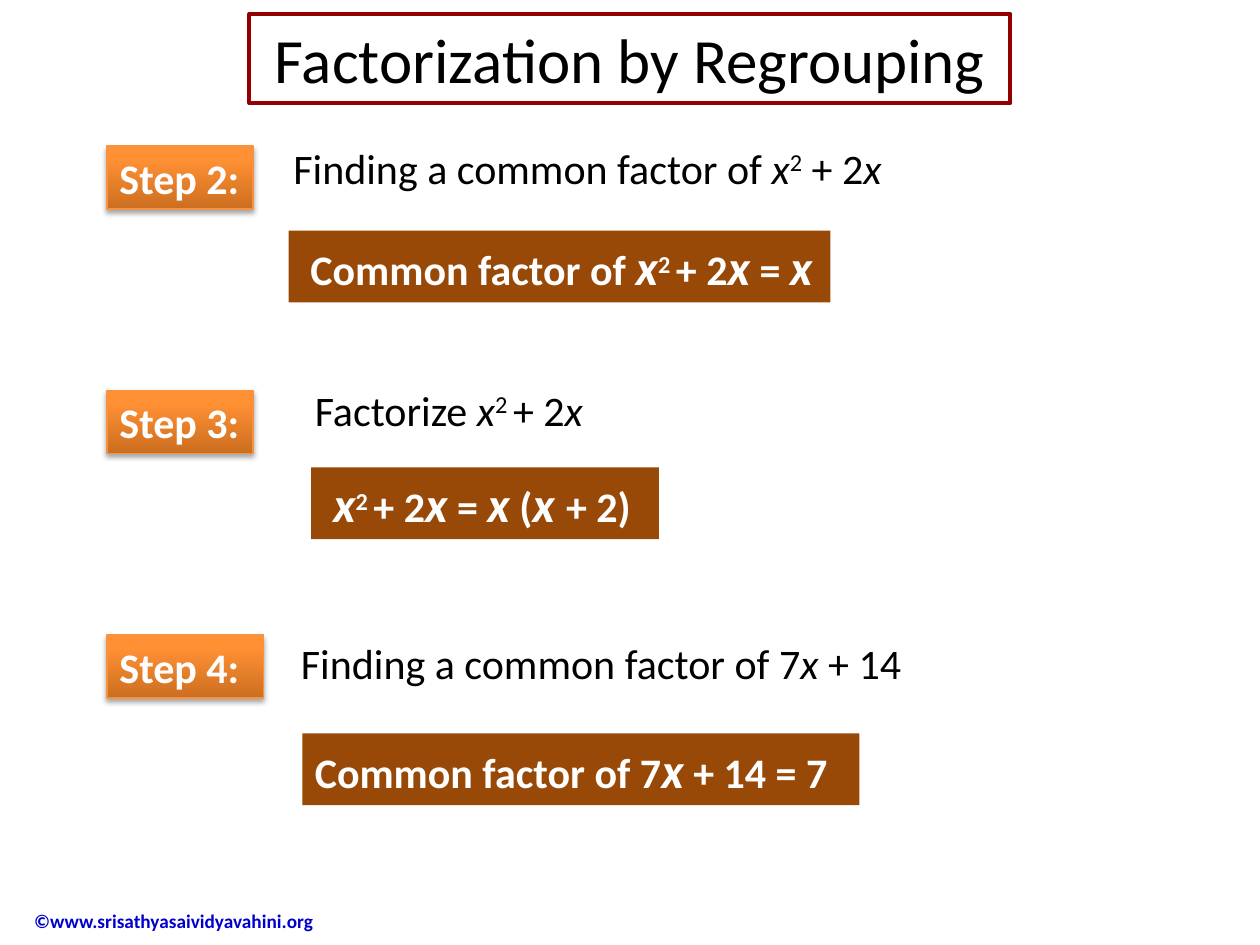
from dataclasses import dataclass
from enum import Enum

import lxml.etree
import pptx
import pptx.dml.color
import pptx.enum.shapes
import pptx.enum.text
import pptx.oxml.ns
import pptx.util

Inches, Pt = pptx.util.Inches, pptx.util.Pt
qn = pptx.oxml.ns.qn

COLORS = {
    "text": "000000",
    "white": "FFFFFF",
    "result": "984807",
    "step_line": "F69240",
    "title_line": "920000",
    "copyright": "0000CC",
    "shadow": "000000",
}
STEP_GRADIENT = [(0, "CC6E20"), (80, "FF9034"), (100, "FF9136")]


class Kind(Enum):
    PLAIN = "plain"
    VAR = "variable"
    SUP = "superscript"


@dataclass
class Run:
    text: str
    kind: Kind = Kind.PLAIN


@dataclass
class Box:
    left: float
    top: float
    width: float
    height: float
    runs: list[Run]


@dataclass
class Step:
    label: Box
    task: Box
    result: Box


X = Run("x", Kind.VAR)
X_SQUARED_PLUS_2X = [X, Run("2 ", Kind.SUP), Run("+ 2"), X]

STEPS = [
    Step(
        Box(0.85, 1.16, 1.16, 0.5, [Run("Step 2:")]),
        Box(2.23, 1.08, 5.02, 0.5,
            [Run("Finding a common factor of "), X, Run("2", Kind.SUP), Run(" + 2"), X]),
        Box(2.29, 1.83, 4.3, 0.57,
            [Run(" Common factor of "), *X_SQUARED_PLUS_2X, Run(" = "), X]),
    ),
    Step(
        Box(0.85, 3.1, 1.16, 0.5, [Run("Step 3:")]),
        Box(2.4, 3, 2.59, 0.5, [Run("Factorize "), *X_SQUARED_PLUS_2X]),
        Box(2.47, 3.71, 2.76, 0.57,
            [Run(" "), *X_SQUARED_PLUS_2X, Run(" = "), X, Run(" ("),
             Run("x ", Kind.VAR), Run("+ 2)")]),
    ),
    Step(
        Box(0.85, 5.04, 1.24, 0.5, [Run("Step 4:")]),
        Box(2.29, 5.01, 5.17, 0.5,
            [Run("Finding a common factor of 7"), X, Run(" + 14")]),
        Box(2.4, 5.82, 4.42, 0.57,
            [Run("Common factor of 7"), X, Run(" + 14 = 7")]),
    ),
]
TITLE = Box(1.98, 0.11, 6.04, 0.71, [Run("Factorization by Regrouping")])
COPYRIGHT = Box(-0.33, 7.1, 3.02, 0.41, [Run("©www.srisathyasaividyavahini.org")])


def rgb(name: str) -> pptx.dml.color.RGBColor:
    return pptx.dml.color.RGBColor.from_string(COLORS[name])


def write_runs(sp, runs: list[Run], color: str, size: float = 24,
               var_size: float = 24, bold: bool = False):
    tf = sp.text_frame
    tf.word_wrap = True
    tf.vertical_anchor = pptx.enum.text.MSO_ANCHOR.TOP
    p = tf.paragraphs[0]
    p.alignment = pptx.enum.text.PP_ALIGN.LEFT
    for run in runs:
        r = p.add_run()
        r.text = run.text
        r.font.name = "Calibri"
        r.font.size = Pt(var_size if run.kind is Kind.VAR else size)
        r.font.bold = bold
        r.font.italic = run.kind is Kind.VAR
        r.font.color.rgb = rgb(color)
        if run.kind is Kind.SUP:
            r._r.get_or_add_rPr().set("baseline", "30000")
    return tf


def add_text(s, box: Box):
    return s.shapes.add_textbox(
        Inches(box.left), Inches(box.top), Inches(box.width), Inches(box.height))


def add_rect(s, box: Box):
    sp = s.shapes.add_shape(
        pptx.enum.shapes.MSO_SHAPE.RECTANGLE,
        Inches(box.left), Inches(box.top), Inches(box.width), Inches(box.height))
    sp.shadow.inherit = False
    return sp


def add_color(parent, name: str, value: str):
    parent_color = lxml.etree.SubElement(parent, qn("a:srgbClr"), val=value)
    return parent_color


def add_label(s, box: Box) -> None:
    sp = add_rect(s, box)
    # Three-stop gradient, dark at the bottom
    sp.fill.gradient()
    sp.fill.gradient_angle = 90
    stops = sp._element.spPr.find(".//" + qn("a:gsLst"))
    for old in list(stops):
        stops.remove(old)
    for percent, value in STEP_GRADIENT:
        stop = lxml.etree.SubElement(stops, qn("a:gs"), pos=str(percent * 1000))
        lxml.etree.SubElement(stop, qn("a:srgbClr"), val=value)
    sp.line.color.rgb = rgb("step_line")
    sp.line.width = Pt(0.75)
    # Soft shadow straight below
    effects = sp._element.spPr.find(qn("a:effectLst"))
    shadow = lxml.etree.SubElement(
        effects, qn("a:outerShdw"), blurRad=str(Pt(3.1)), dist=str(Pt(1.8)),
        dir="5400000", rotWithShape="0")
    color = lxml.etree.SubElement(shadow, qn("a:srgbClr"), val=COLORS["shadow"])
    lxml.etree.SubElement(color, qn("a:alpha"), val="35000")
    tf = write_runs(sp, box.runs, "white", bold=True)
    tf.margin_right = 0


def add_result(s, box: Box) -> None:
    sp = add_rect(s, box)
    sp.fill.solid()
    sp.fill.fore_color.rgb = rgb("result")
    sp.line.fill.background()
    write_runs(sp, box.runs, "white", var_size=28, bold=True)


def add_title(s, box: Box) -> None:
    sp = add_rect(s, box)
    sp.fill.background()
    sp.line.color.rgb = rgb("title_line")
    sp.line.width = Pt(2.25)
    tf = write_runs(sp, box.runs, "text", size=36)
    tf.paragraphs[0].alignment = pptx.enum.text.PP_ALIGN.CENTER


def add_copyright(s, box: Box) -> None:
    tf = write_runs(add_text(s, box), box.runs, "copyright", size=11, bold=True)
    tf.margin_left = Inches(0.6)
    tf.vertical_anchor = pptx.enum.text.MSO_ANCHOR.MIDDLE


def main() -> None:
    prs = pptx.Presentation()
    prs.slide_width, prs.slide_height = Inches(10), Inches(7.5)
    s = prs.slides.add_slide(prs.slide_layouts[6])
    add_copyright(s, COPYRIGHT)
    add_title(s, TITLE)
    # Each step: label, task and highlighted result
    for step in STEPS:
        add_label(s, step.label)
        write_runs(add_text(s, step.task), step.task.runs, "text")
        add_result(s, step.result)
    prs.save("out.pptx")


if __name__ == "__main__":
    main()
